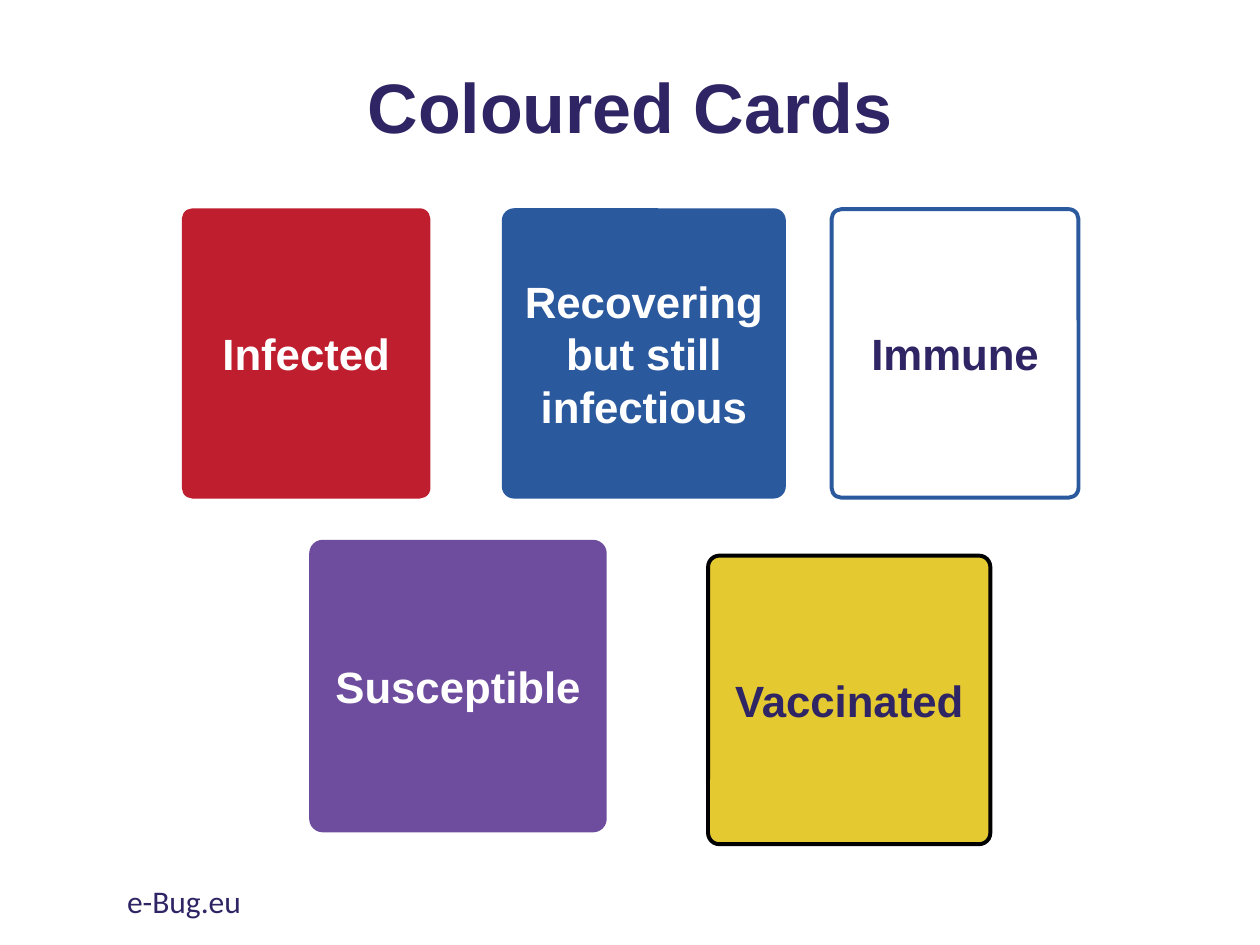
"""Build the slide of coloured cards for the infection game."""

from dataclasses import dataclass

from pptx import Presentation
from pptx.dml.color import RGBColor
from pptx.enum.shapes import MSO_SHAPE
from pptx.enum.text import MSO_ANCHOR, PP_ALIGN
from pptx.slide import Slide
from pptx.text.text import TextFrame
from pptx.util import Inches, Pt

COLORS = {
    "navy": "302564",
    "red": "BE1E2D",
    "blue": "2B599E",
    "purple": "6E4D9F",
    "yellow": "E4C931",
    "white": "FFFFFF",
    "black": "000000",
}
COLUMNS, ROWS = 100, 75
CELL = Inches(0.1)
CARD_HEIGHT = 22.9
TOP_ROW = 16.6


@dataclass(frozen=True)
class Card:
    label: str
    column: float
    row: float
    width: float
    fill: str
    line: str
    text: str = "white"
    line_points: float = 2.25


CARDS = [
    Card("Infected", 14.5, TOP_ROW, 19.6, "red", "red", line_points=1),
    Card("Recovering but still infectious", 39.9, TOP_ROW, 22.4, "blue", "blue", line_points=1),
    Card("Immune", 66, TOP_ROW, 19.6, "white", "blue", "navy"),
    Card("Susceptible", 24.7, 43, 23.3, "purple", "purple"),
    Card("Vaccinated", 56.2, 44.1, 22.4, "yellow", "black", "navy"),
]


def cells(count: float) -> int:
    return round(count * CELL)


def color(name: str) -> RGBColor:
    return RGBColor.from_string(COLORS[name])


def write(text_frame: TextFrame, text: str, size: float, color_name: str,
          font_name: str = "Arial", bold: bool = True,
          alignment: PP_ALIGN = PP_ALIGN.CENTER,
          anchor: MSO_ANCHOR = MSO_ANCHOR.MIDDLE) -> None:
    text_frame.text = text
    text_frame.word_wrap = True
    text_frame.vertical_anchor = anchor
    paragraph = text_frame.paragraphs[0]
    paragraph.alignment = alignment
    for run in paragraph.runs:
        run.font.name = font_name
        run.font.size = Pt(size)
        run.font.bold = bold
        run.font.color.rgb = color(color_name)


def add_title(slide: Slide, text: str) -> None:
    title = slide.shapes.title
    title.left, title.top = cells(6.9), cells(3.5)
    title.width, title.height = cells(86.2), cells(10.6)
    write(title.text_frame, text, 40, "navy")
    title.text_frame.paragraphs[0].line_spacing = 0.9


def add_card(slide: Slide, card: Card) -> None:
    shape = slide.shapes.add_shape(
        MSO_SHAPE.ROUNDED_RECTANGLE, cells(card.column), cells(card.row),
        cells(card.width), cells(CARD_HEIGHT))
    shape.adjustments[0] = 0.04
    shape.shadow.inherit = False
    shape.fill.solid()
    shape.fill.fore_color.rgb = color(card.fill)
    shape.line.color.rgb = color(card.line)
    shape.line.width = Pt(card.line_points)
    write(shape.text_frame, card.label, 25, card.text)


def add_footer(slide: Slide, text: str) -> None:
    footer = slide.shapes.add_textbox(cells(9.1), cells(69.5), cells(33.8), cells(4))
    write(footer.text_frame, text, 18, "navy", "Calibri", False,
          PP_ALIGN.LEFT, MSO_ANCHOR.TOP)


def main() -> None:
    presentation = Presentation()
    presentation.slide_width = cells(COLUMNS)
    presentation.slide_height = cells(ROWS)
    slide = presentation.slides.add_slide(presentation.slide_layouts.get_by_name("Title Only"))
    add_title(slide, "Coloured Cards")
    for card in CARDS:
        add_card(slide, card)
    add_footer(slide, "e-Bug.eu")
    presentation.save("out.pptx")


if __name__ == "__main__":
    main()
